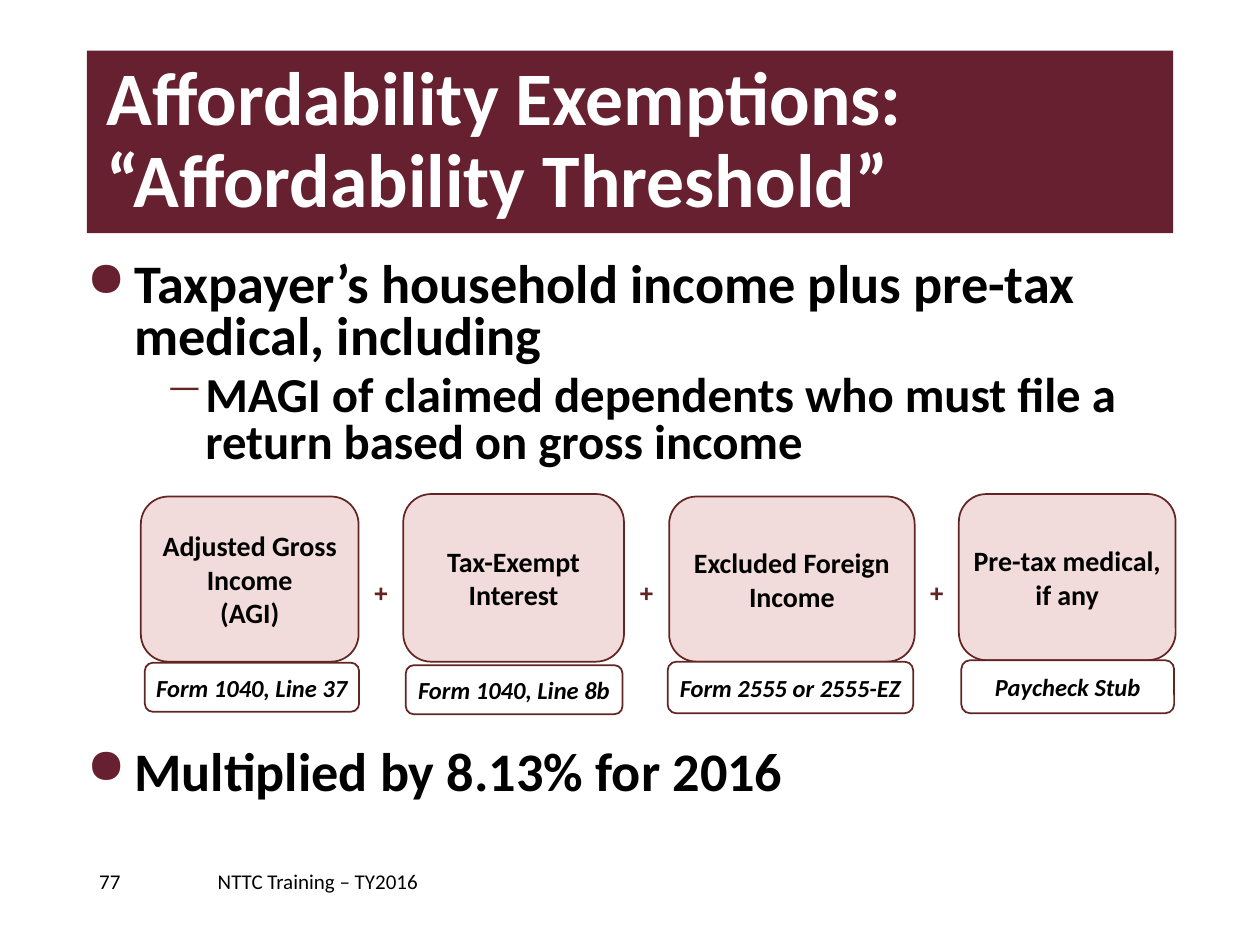
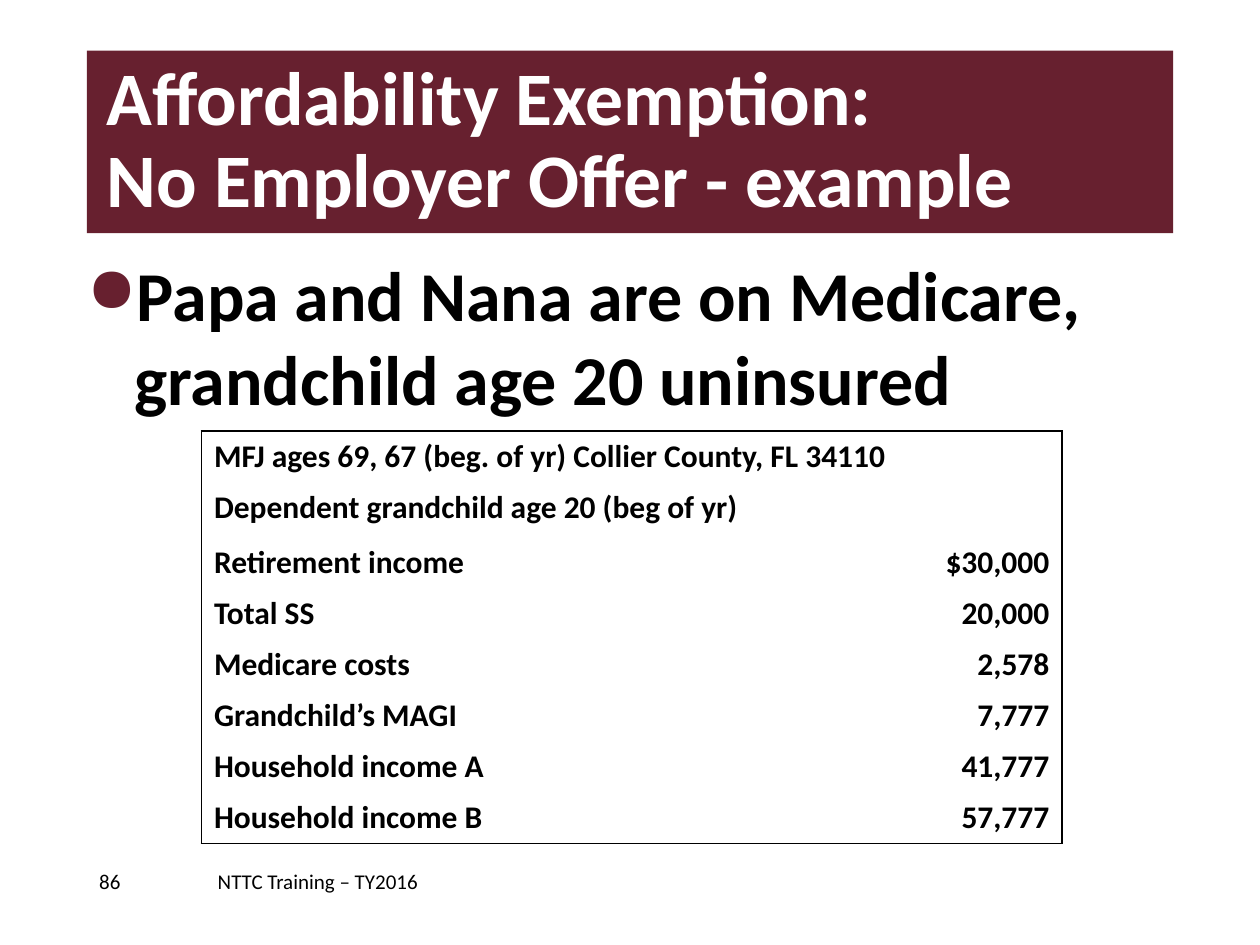
from lxml import etree
from pptx import Presentation
from pptx.dml.color import RGBColor
from pptx.enum.shapes import MSO_SHAPE
from pptx.enum.text import MSO_ANCHOR, PP_ALIGN
from pptx.oxml.ns import qn
from pptx.util import Cm, Pt

RECT, ROUND = MSO_SHAPE.RECTANGLE, MSO_SHAPE.ROUNDED_RECTANGLE
TOP, MIDDLE = MSO_ANCHOR.TOP, MSO_ANCHOR.MIDDLE
LEFT, MID, RIGHT = PP_ALIGN.LEFT, PP_ALIGN.CENTER, PP_ALIGN.RIGHT

WINE = RGBColor(0x67, 0x20, 0x2F)
BROWN = RGBColor(0x63, 0x25, 0x23)
PINK = RGBColor(0xF2, 0xDC, 0xDB)
WHITE = RGBColor(0xFF, 0xFF, 0xFF)
BLACK = RGBColor(0, 0, 0)

EDGE = 1.75
WIDTH = 21.9
FOOT = "NTTC Training – TY2016"
DOT = ("●", WINE, 90)
DASH = ("−", BROWN, 100)

CARDS = [
    ("Adjusted Gross Income\n(AGI)", (2.84, 10.01, 4.39, 3.33),
     "Form 1040, Line 37", (2.92, 13.36, 4.32, 0.99)),
    ("Tax-Exempt Interest", (8.13, 9.96, 4.45, 3.38),
     "Form 1040, Line 8b", (8.18, 13.41, 4.37, 0.99)),
    ("Excluded Foreign Income", (13.49, 10.01, 4.95, 3.33),
     "Form 2555 or 2555-EZ", (13.46, 13.34, 4.95, 1.04)),
    ("Pre-tax medical, if any", (19.33, 9.96, 4.37, 3.35),
     "Paycheck Stub", (19.38, 13.31, 4.29, 1.07)),
]
FACTS = [
    ("MFJ ages 69, 67 (beg. of yr) Collier County, FL 34110", ""),
    ("Dependent grandchild age 20 (beg of yr)", ""),
    ("Retirement income", "$30,000"),
    ("Total SS", "20,000"),
    ("Medicare costs", "2,578"),
    ("Grandchild’s MAGI", "7,777"),
    ("Household income A", "41,777"),
    ("Household income B", "57,777"),
]


def mark(para, bullet):
    """Give a paragraph a bullet sign with its colour and size."""
    sign, color, size = bullet
    props = para._p.get_or_add_pPr()
    tint = etree.SubElement(props, qn("a:buClr"))
    etree.SubElement(tint, qn("a:srgbClr"), val=str(color))
    etree.SubElement(props, qn("a:buSzPct"), val=str(size * 1000))
    etree.SubElement(props, qn("a:buChar"), char=sign)


def write(frame, text, size=18, color=BLACK, bold=True, italic=False,
          font="Calibri", align=LEFT, space=None, before=0, left=0, hang=0,
          bullet=None):
    """Put one formatted paragraph at the end of a text frame."""
    para = frame.paragraphs[0] if not frame.text else frame.add_paragraph()
    para.text = text
    para.alignment = align
    props = para._p.get_or_add_pPr()
    props.set("marL", str(Cm(left)))
    props.set("indent", str(-Cm(hang)))
    if bullet:
        mark(para, bullet)
    if space:
        para.line_spacing = space
    if before:
        para.space_before = Pt(before)
    for run in para.runs:
        run.font.name = font
        run.font.size = Pt(size)
        run.font.bold = bold
        run.font.italic = italic
        run.font.color.rgb = color


def fit(frame, anchor, pad=None):
    """Set wrapping, anchor and equal insets of a text frame."""
    frame.word_wrap = True
    frame.vertical_anchor = anchor
    if pad is not None:
        frame.margin_left = frame.margin_right = Cm(pad)
        frame.margin_top = frame.margin_bottom = Cm(pad)
    return frame


def add_text(slide, box, anchor=TOP, pad=None):
    """Add an empty text box and return its frame."""
    shape = slide.shapes.add_textbox(*map(Cm, box))
    return fit(shape.text_frame, anchor, pad)


def add_box(slide, kind, box, fill, line=None, pad=None):
    """Add a filled shape and return its text frame."""
    shape = slide.shapes.add_shape(kind, *map(Cm, box))
    shape.shadow.inherit = False
    shape.fill.solid()
    shape.fill.fore_color.rgb = fill
    if line:
        shape.line.color.rgb = line
        shape.line.width = Pt(1)
    else:
        shape.line.fill.background()
    return fit(shape.text_frame, MIDDLE, pad)


def add_base(deck, title, page):
    """Add a slide with its title band and footer."""
    slide = deck.slides.add_slide(deck.slide_layouts[6])
    band = add_box(slide, RECT, (EDGE, 1.02, WIDTH, 3.68), WINE)
    write(band, title, size=43.2, color=WHITE, space=0.9, left=0.15)
    for text, left, width in ((FOOT, 4.14, 9.58), (page, EDGE, 1.78)):
        frame = add_text(slide, (left, 17.25, width, 1.02), MIDDLE)
        write(frame, text, size=12, bold=False)
    return slide


def add_point(slide, top, height, text, size, space=None):
    """Add a text box that opens with a main bullet."""
    frame = add_text(slide, (EDGE, top, WIDTH, height), pad=0)
    write(frame, text, size=size, space=space, left=0.96, hang=0.96,
          bullet=DOT)
    return frame


def add_sum(slide):
    """Add the income cards, their form tags and the plus signs between."""
    end = None
    for text, card, form, tag in CARDS:
        frame = add_box(slide, ROUND, card, PINK, BROWN, 0.02)
        for line in text.split("\n"):
            write(frame, line, size=16, align=MID)
        frame = add_box(slide, ROUND, tag, WHITE, BROWN, 0.02)
        write(frame, form, size=14, italic=True, align=MID)
        if end:
            left = (end + card[0]) / 2 - 0.4
            plus = add_box(slide, RECT, (left, 11.38, 0.8, 1.12), WHITE, pad=0)
            write(plus, "+", size=14, color=BROWN, font="Arial", align=MID)
        end = card[0] + card[2]


def add_edges(cell, sides):
    """Draw the named cell sides in black and hide the others."""
    props = cell._tc.get_or_add_tcPr()
    for spot, side in enumerate("LRTB"):
        line = etree.Element(qn("a:ln" + side), w=str(Pt(1)))
        if side in sides:
            fill = etree.SubElement(line, qn("a:solidFill"))
            etree.SubElement(fill, qn("a:srgbClr"), val=str(BLACK))
        else:
            etree.SubElement(line, qn("a:noFill"))
        props.insert(spot, line)


def add_facts(slide):
    """Add the framed table of household facts."""
    last = len(FACTS) - 1
    table = slide.shapes.add_table(
        len(FACTS), 2, Cm(4.06), Cm(8.69), Cm(17.35), Cm(8.31)).table
    table.first_row = table.horz_banding = False
    table.columns[0].width, table.columns[1].width = Cm(14.55), Cm(2.8)
    for row, pair in enumerate(FACTS):
        table.rows[row].height = Cm(1.1 if row == 1 else 1.03)
        for col, text in enumerate(pair):
            cell = table.cell(row, col)
            cell.fill.background()
            if text:
                write(cell.text_frame, text, align=RIGHT if col else LEFT)
            sides = "R" if col else "L"
            sides += "T" if row == 0 else "B" if row == last else ""
            add_edges(cell, sides)


def main():
    """Build both slides and save the deck."""
    deck = Presentation()
    deck.slide_width, deck.slide_height = Cm(25.4), Cm(19.05)

    slide = add_base(
        deck, "Affordability Exemptions:\v“Affordability Threshold”", "77")
    frame = add_point(
        slide, 5.28, 4.4,
        "Taxpayer’s household income plus pre-tax medical, including", 31, 0.8)
    write(frame, "MAGI of claimed dependents who must file a return based on "
          "gross income", size=27.9, space=0.8, before=5, left=2.39,
          hang=0.81, bullet=DASH)
    add_sum(slide)
    add_point(slide, 15.11, 1.5, "Multiplied by 8.13% for 2016", 31, 0.8)

    slide = add_base(
        deck, "Affordability Exemption:\vNo Employer Offer - example", "86")
    add_point(slide, 5.08, 3.6,
              "Papa and Nana are on Medicare, grandchild age 20 uninsured", 40)
    add_facts(slide)
    deck.save("out.pptx")


if __name__ == "__main__":
    main()
